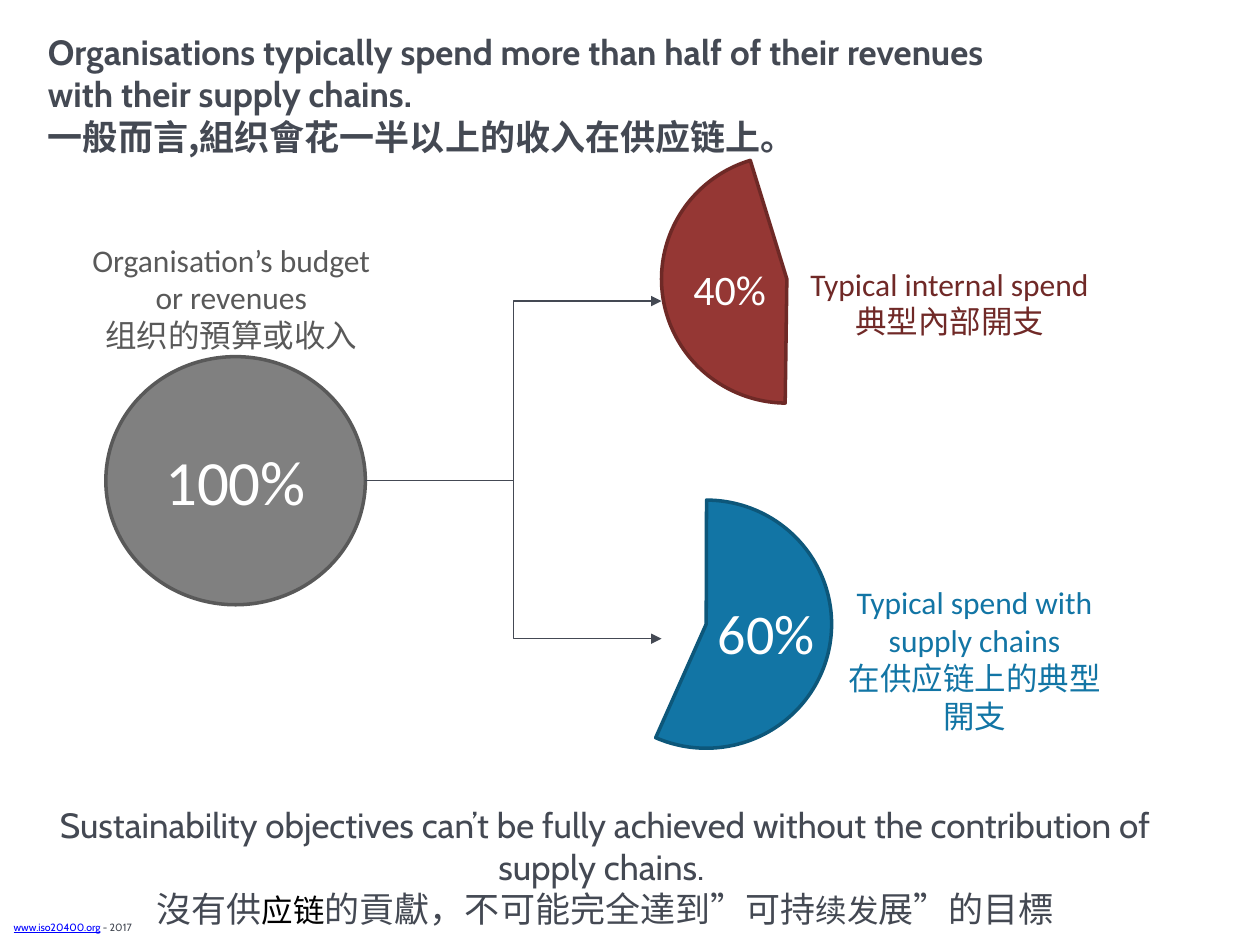
from lxml import etree
from pptx import Presentation
from pptx.dml.color import RGBColor
from pptx.enum.shapes import MSO_CONNECTOR, MSO_SHAPE
from pptx.enum.text import MSO_ANCHOR, MSO_AUTO_SIZE, PP_ALIGN
from pptx.oxml.ns import qn
from pptx.util import Pt

ELLIPSE, PIE = MSO_SHAPE.OVAL, MSO_SHAPE.PIE
ELBOW = MSO_CONNECTOR.ELBOW
LEFT, CENTER = PP_ALIGN.LEFT, PP_ALIGN.CENTER
TOP, MIDDLE = MSO_ANCHOR.TOP, MSO_ANCHOR.MIDDLE
NO_FIT = MSO_AUTO_SIZE.NONE

SLATE = RGBColor(0x44, 0x49, 0x53)
BLACK = RGBColor(0, 0, 0)
WHITE = RGBColor(0xFF, 0xFF, 0xFF)
LINK = RGBColor(0, 0, 0xFF)
GREY = RGBColor(0x80, 0x80, 0x80)
DARK_GREY = RGBColor(0x59, 0x59, 0x59)
RED = RGBColor(0x95, 0x37, 0x34)
RED_EDGE = RGBColor(0x6E, 0x29, 0x26)
RED_TEXT = RGBColor(0x70, 0x29, 0x27)
BLUE = RGBColor(0x12, 0x75, 0xA5)
BLUE_EDGE = RGBColor(0x0D, 0x57, 0x7A)

HEAD_FONT, BODY_FONT, CJK_FONT = "Cabin", "Calibri", "Noto Sans CJK SC"


def run(text, size=18, color=SLATE, font=BODY_FONT, bold=False, underline=False):
    return dict(text=text, size=size, color=color, font=font,
                bold=bold, underline=underline)


class SlideBuilder:
    def __init__(self, prs):
        self.slide = prs.slides.add_slide(prs.slide_layouts[5])
        self.shapes = self.slide.shapes

    def group(self):
        self.shapes = self.slide.shapes.add_group_shape().shapes

    def ungroup(self):
        self.shapes = self.slide.shapes

    def fill_text(self, sp, paragraphs, align=CENTER, anchor=TOP, wrap=True):
        tf = sp.text_frame
        tf.auto_size = NO_FIT
        tf.word_wrap = wrap
        tf.vertical_anchor = anchor
        for i, runs in enumerate(paragraphs):
            p = tf.add_paragraph() if i else tf.paragraphs[0]
            p.alignment = align
            for item in runs:
                if item is None:
                    p.add_line_break()
                    continue
                r = p.add_run()
                r.text = item["text"]
                r.font.size = Pt(item["size"])
                r.font.name = item["font"]
                r.font.bold = item["bold"]
                r.font.underline = item["underline"]
                r.font.color.rgb = item["color"]
                ea = etree.SubElement(r.font._element, qn("a:ea"))
                ea.set("typeface", CJK_FONT)

    def title(self, box, paragraphs):
        sp = self.slide.shapes.title
        sp.left, sp.top, sp.width, sp.height = map(Pt, box)
        self.fill_text(sp, paragraphs, LEFT, MIDDLE)

    def text(self, box, paragraphs, align=CENTER, wrap=True):
        sp = self.shapes.add_textbox(*map(Pt, box))
        self.fill_text(sp, paragraphs, align, wrap=wrap)

    def shape(self, kind, box, fill, edge, paragraphs=(), angles=()):
        sp = self.shapes.add_shape(kind, *map(Pt, box))
        sp.shadow.inherit = False
        sp.fill.solid()
        sp.fill.fore_color.rgb = fill
        sp.line.color.rgb = edge
        sp.line.width = Pt(2)
        for i, angle in enumerate(angles):
            sp.adjustments[i] = angle * 0.6
        self.fill_text(sp, paragraphs, anchor=MIDDLE)

    def arrow(self, start, end):
        cx = self.shapes.add_connector(ELBOW, *map(Pt, start + end))
        cx.line.color.rgb = SLATE
        cx.line.width = Pt(0.75)
        tail = etree.SubElement(cx.line._get_or_add_ln(), qn("a:tailEnd"))
        tail.set("type", "triangle")
        etree.SubElement(cx._element.spPr, qn("a:effectLst"))


def main():
    prs = Presentation()
    prs.slide_width, prs.slide_height = Pt(720), Pt(540)
    s = SlideBuilder(prs)

    s.text((0.7, 522.7, 466, 14.4), [[
        run("www.iso20400.org", 6, LINK, HEAD_FONT, underline=True),
        run(" - 2017", 6, font=HEAD_FONT)]], LEFT)
    s.title((20.2, 31, 566.6, 45.4), [[
        run("Organisations typically spend more than half of their revenues "
            "with their supply chains.", 20, font=HEAD_FONT, bold=True),
        None,
        run("一般而言,組织會花一半以上的收入在供应链上。", 20, font=CJK_FONT, bold=True)]])
    s.text((14.4, 455.8, 663, 80), [
        [run("Sustainability objectives can’t be fully achieved without the "
             "contribution of supply chains. ", 20, font=HEAD_FONT)],
        [run("沒有供", 20, font=CJK_FONT),
         run("应链", 18, BLACK, CJK_FONT),
         run("的貢獻，不可能完全達到”可持", 20, font=CJK_FONT),
         run("续发", 18, font=CJK_FONT),
         run("展”的目標", 20, font=CJK_FONT)]])

    s.shape(ELLIPSE, (60.5, 203.8, 148.3, 141.8), GREY, DARK_GREY,
            [[run("100%", 36, WHITE)]])
    s.text((38.9, 134, 186.5, 116.6), [
        [run("Organisation’s budget or revenues", color=DARK_GREY)],
        [run("组织的預算或收入", color=DARK_GREY)]])

    s.group()
    s.shape(PIE, (378, 88.6, 143.3, 141.8), RED, RED_EDGE, angles=(90.79, 252.87))
    s.text((437.8, 147.6, 209.5, 51), [
        [run("Typical internal spend", color=RED_TEXT)],
        [run("典型內部開支", color=RED_TEXT)]])
    s.text((388.8, 146.9, 56.2, 36), [[run("40%", 24, WHITE)]], wrap=False)

    s.group()
    s.text((475.2, 329.8, 163.4, 94.3), [
        [run("Typical spend with supply chains", color=BLUE)],
        [run("在供应链上的典型開支", color=BLUE)]])
    s.shape(PIE, (331.9, 285.8, 143.3, 141.8), BLUE, BLUE_EDGE, angles=(270.15, 113.98))
    s.text((402.5, 338.4, 70.6, 46), [[run("60%", 32, WHITE)]], wrap=False)
    s.ungroup()

    for y in (172.1, 365):
        s.arrow((208.8, 274.5), (378, y))

    prs.save("out.pptx")


if __name__ == "__main__":
    main()
